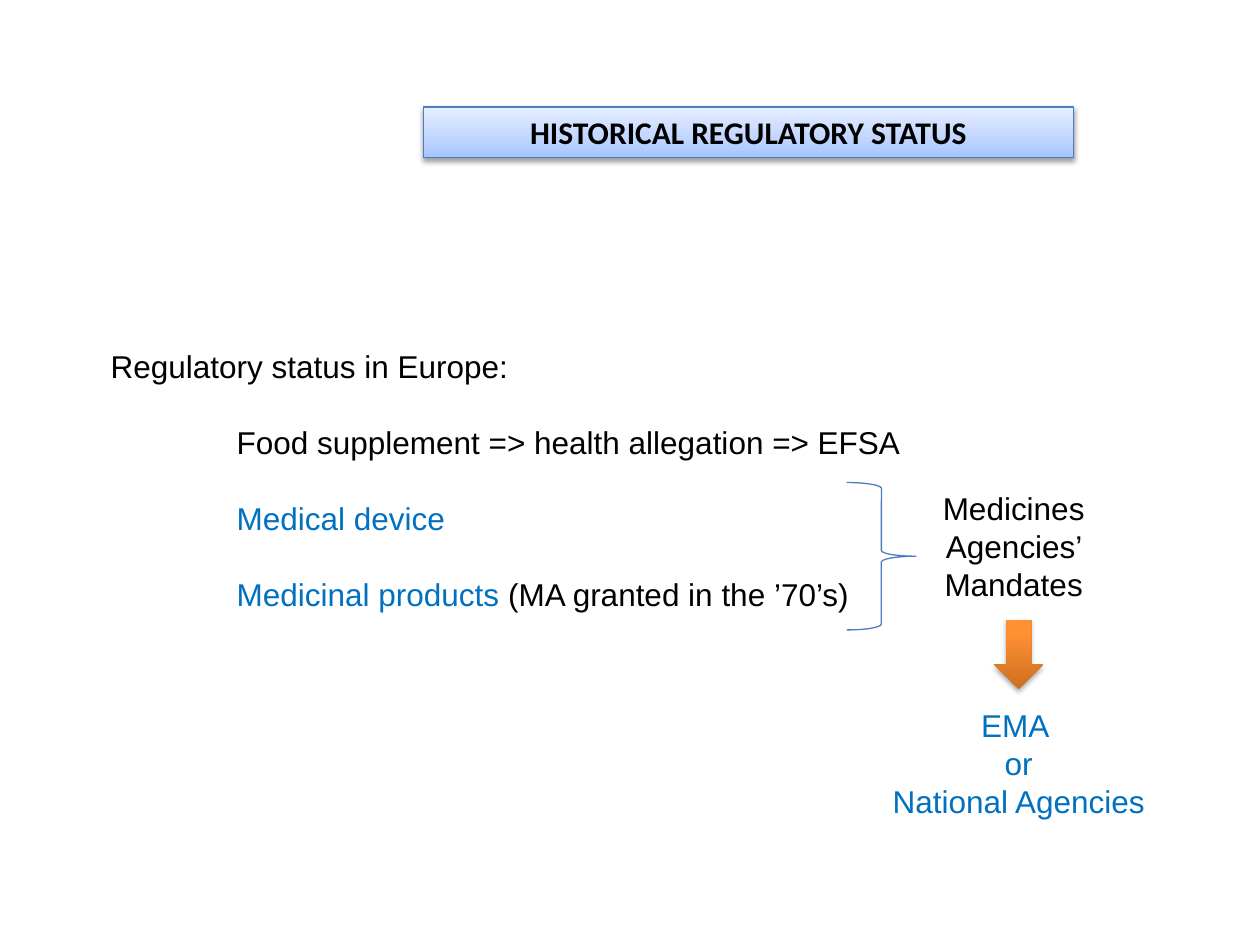
from dataclasses import dataclass

from lxml import etree
from pptx import Presentation
from pptx.dml.color import RGBColor
from pptx.enum.shapes import MSO_SHAPE
from pptx.enum.text import MSO_ANCHOR, MSO_AUTO_SIZE, PP_ALIGN
from pptx.oxml.ns import qn
from pptx.util import Inches, Pt

CENTER = PP_ALIGN.CENTER
LEFT = PP_ALIGN.LEFT
TOP = MSO_ANCHOR.TOP
MIDDLE = MSO_ANCHOR.MIDDLE
FIXED = MSO_AUTO_SIZE.NONE
BRACE = MSO_SHAPE.RIGHT_BRACE
ARROW = MSO_SHAPE.DOWN_ARROW


@dataclass(frozen=True)
class Theme:
    ink: str = "000000"
    blue: str = "0070C0"
    edge: str = "4B7EBC"
    sky: tuple = ((0, "A4C4FF"), (35, "BFD4FF"), (100, "E6EEFF"))
    flame: tuple = ((0, "CC6E20"), (80, "FF9034"), (100, "FF9136"))
    head: str = "Calibri"
    body: str = "Arial"
    size: float = 18
    pitch: float = 21.7
    thin: float = 0.75


THEME = Theme()


def rgb(code):
    return RGBColor.from_string(code)


def node(root, tag, **attrs):
    return etree.SubElement(root, qn(tag), {k: str(v) for k, v in attrs.items()})


def blend(shape, stops):
    grad = node(shape.element.spPr, "a:gradFill", rotWithShape=1)
    items = node(grad, "a:gsLst")
    for pos, code in stops:
        stop = node(items, "a:gs", pos=pos * 1000)
        node(stop, "a:srgbClr", val=code)
    node(grad, "a:lin", ang=270 * 60000, scaled=0)


def shade(shape, blur, dist, alpha):
    effect = node(shape.element.spPr, "a:effectLst")
    drop = node(effect, "a:outerShdw", blurRad=Pt(blur), dist=Pt(dist),
                dir=90 * 60000, rotWithShape=0)
    tint = node(drop, "a:srgbClr", val=THEME.ink)
    node(tint, "a:alpha", val=alpha * 1000)


def outline(shape):
    shape.line.color.rgb = rgb(THEME.edge)
    shape.line.width = Pt(THEME.thin)


def place(shape, box):
    shape.left, shape.top, shape.width, shape.height = map(Inches, box)


def draw_title(slide, box):
    title = slide.shapes.title
    place(title, box)
    blend(title, THEME.sky)
    outline(title)
    shade(title, 3.1, 1.6, 38)
    frame = title.text_frame
    frame.text = "HISTORICAL REGULATORY STATUS"
    frame.auto_size = FIXED
    frame.vertical_anchor = MIDDLE
    para = frame.paragraphs[0]
    para.alignment = CENTER
    font = para.font
    font.name, font.size, font.bold = THEME.head, Pt(THEME.size), True
    font.color.rgb = rgb(THEME.ink)


def write(slide, box, lines, align=CENTER, gap=0):
    frame = slide.shapes.add_textbox(*map(Inches, box)).text_frame
    frame.word_wrap = True
    frame.vertical_anchor = TOP
    for i, runs in enumerate(lines):
        para = frame.add_paragraph() if i else frame.paragraphs[0]
        para.alignment = align
        para.line_spacing = Pt(THEME.pitch)
        para.space_after = Pt(gap)
        para.font.name = THEME.body
        para.font.size = Pt(THEME.size)
        for text, code in runs:
            run = para.add_run()
            run.text = text
            run.font.color.rgb = rgb(code)
    return frame


def draw_list(slide, box):
    ink, blue = THEME.ink, THEME.blue
    lines = [
        [("Regulatory status in Europe:", ink)],
        [("Food supplement => health allegation => EFSA", ink)],
        [("Medical device", blue)],
        [("Medicinal products ", blue), ("(MA granted in the ’70’s)", ink)],
    ]
    frame = write(slide, box, lines, LEFT, THEME.pitch)
    frame.margin_top = Inches(0.64)
    for para in frame.paragraphs[1:]:
        para._p.get_or_add_pPr().set("marL", str(Inches(1)))


def draw_flow(slide, box):
    x, y, w, h = box
    brace = slide.shapes.add_shape(BRACE, *map(Inches, (x + 0.47, y, 0.55, 1.17)))
    brace.fill.background()
    outline(brace)
    brace.shadow.inherit = False

    write(slide, (x + 1.09, y, 1.41, 1.01),
          [[("Medicines Agencies’ Mandates", THEME.ink)]])

    arrow = slide.shapes.add_shape(ARROW, *map(Inches, (x + 1.64, y + 1.09, 0.39, 0.55)))
    blend(arrow, THEME.flame)
    arrow.line.fill.background()
    shade(arrow, 3.1, 1.8, 35)

    names = ("EMA ", "or", "National Agencies")
    write(slide, (x, y + h - 1.01, w, 1.01), [[(name, THEME.blue)] for name in names])


def main():
    deck = Presentation()
    deck.slide_width, deck.slide_height = Inches(10), Inches(7.5)
    slide = deck.slides.add_slide(deck.slide_layouts[5])
    draw_list(slide, (0.78, 2.11, 8.91, 3.13))
    draw_title(slide, (3.36, 0.85, 5.16, 0.4))
    draw_flow(slide, (6.25, 3.83, 3.67, 2.73))
    deck.save("out.pptx")


if __name__ == "__main__":
    main()
